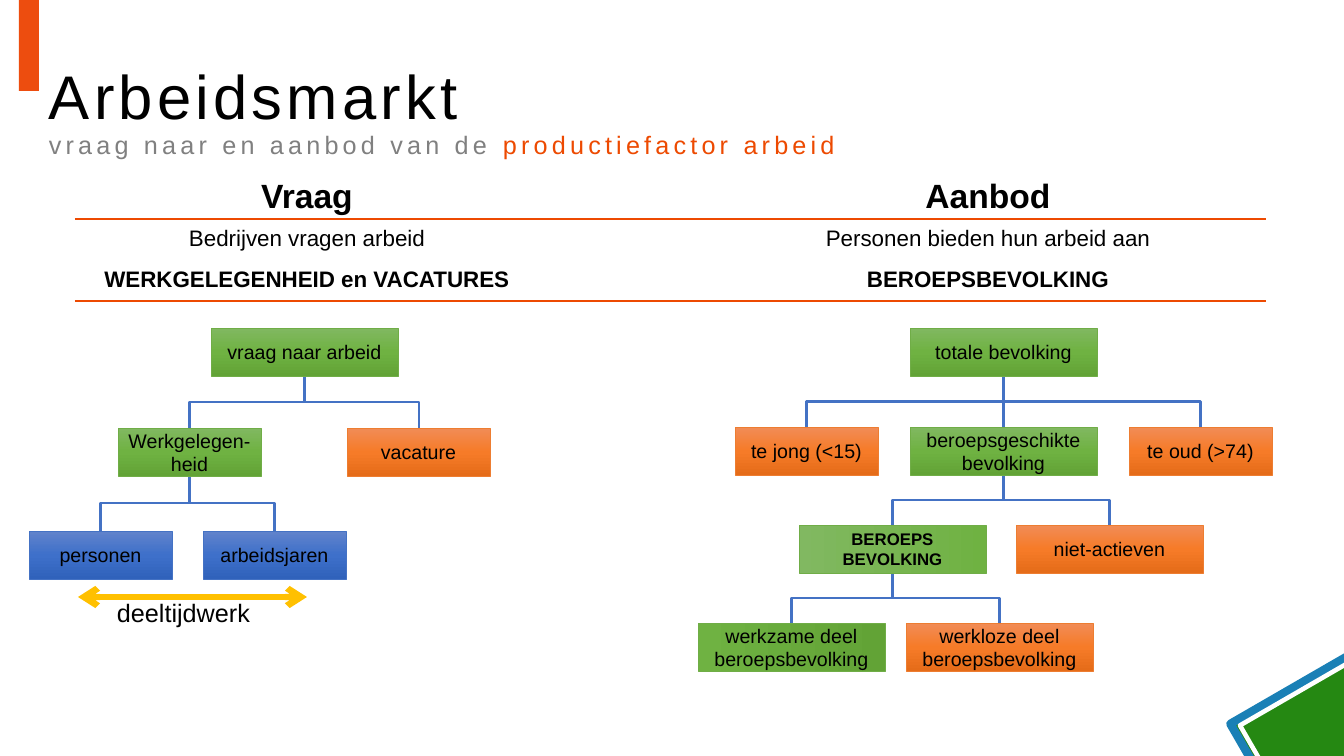
from pptx import Presentation
from pptx.dml.color import RGBColor
from pptx.enum.shapes import MSO_AUTO_SHAPE_TYPE, MSO_CONNECTOR
from pptx.enum.text import MSO_ANCHOR, MSO_AUTO_SIZE, PP_ALIGN
from pptx.oxml import parse_xml
from pptx.oxml.ns import nsdecls, qn
from pptx.util import Emu, Pt

RECT = MSO_AUTO_SHAPE_TYPE.RECTANGLE
STRAIGHT, ELBOW = MSO_CONNECTOR.STRAIGHT, MSO_CONNECTOR.ELBOW
LEFT, CENTER = PP_ALIGN.LEFT, PP_ALIGN.CENTER
TOP, MIDDLE = MSO_ANCHOR.TOP, MSO_ANCHOR.MIDDLE
FIT = MSO_AUTO_SIZE.SHAPE_TO_FIT_TEXT
SCALE = 914400 / 100.8

COLORS = {
    "black": "000000", "white": "FFFFFF", "gray": "808080",
    "accent": "ED4A01", "bar": "ED4D0F", "corner": "258812",
    "corner_edge": "1A80B6", "link": "4472C4", "arrow": "FFC000",
    "green": "70AD47", "orange": "ED7D31", "blue": "4472C4",
}
GRADIENTS = {
    "green": (["81B861", "6FB242", "62A336"], 90),
    "green_dark": (["6FB242", "62A336"], 0),
    "green_light": (["81B861", "6FB242"], 0),
    "orange": (["F18C57", "F67B28", "E56C19"], 90),
    "blue": (["6183CB", "3E70CA", "3062BB"], 90),
}


def px(n):
    return Emu(round(n * SCALE))


def write(tf, lines, size, align=CENTER, anchor=TOP, wrap=True, gap=0):
    for name, value in {"word_wrap": wrap, "vertical_anchor": anchor}.items():
        setattr(tf, name, value)
    for i, (text, bold) in enumerate(lines):
        p = tf.paragraphs[0] if i == 0 else tf.add_paragraph()
        p.text = text
        p.alignment = align
        if i:
            p.space_before = Pt(gap)
        for r in p.runs:
            for name, value in {"name": "Arial", "size": Pt(size), "bold": bold}.items():
                setattr(r.font, name, value)
            r.font.color.rgb = RGBColor.from_string(COLORS["black"])


prs = Presentation()
prs.slide_width, prs.slide_height = px(1344), px(756)
shapes = prs.slides.add_slide(prs.slide_layouts[6]).shapes

for x, y, w, h, rot, fill, line, weight in [
    (1258, 676, 151, 151, 60, "corner", "corner_edge", 6),
    (1265, 682, 137, 137, 60, None, "white", 3.25),
    (19, -25, 20, 116, 0, "bar", None, 0),
]:
    s = shapes.add_shape(RECT, px(x), px(y), px(w), px(h))
    s.shadow.inherit = False
    s.rotation = rot
    if fill:
        s.fill.solid()
        s.fill.fore_color.rgb = RGBColor.from_string(COLORS[fill])
    else:
        s.fill.background()
    if line:
        s.line.color.rgb = RGBColor.from_string(COLORS[line])
        s.line.width = Pt(weight)
    else:
        s.line.fill.background()

tf = shapes.add_textbox(px(39), px(40), px(1268), px(146)).text_frame
tf.word_wrap = True
tf.vertical_anchor = MIDDLE
p = tf.paragraphs[0]
p.line_spacing = 0.9
for text, size, color in [
    ("Arbeidsmarkt ", 44, "black"),
    ("vraag naar en aanbod van de ", 18, "gray"),
    ("productiefactor arbeid", 18, "accent"),
]:
    r = p.add_run()
    r.text = text
    r.font.name = "Arial"
    r.font.size = Pt(size)
    r.font.color.rgb = RGBColor.from_string(COLORS[color])
    r.font._element.set("spc", "300")
    if size == 44:
        p.add_line_break()

for x, heading, intro, term in [
    (56, "Vraag", "Bedrijven vragen arbeid", "WERKGELEGENHEID en VACATURES"),
    (737, "Aanbod", "Personen bieden hun arbeid aan", "BEROEPSBEVOLKING"),
]:
    for y, h, lines, size in [
        (170, 50, [(heading, True)], 24),
        (219, 80, [(intro, False), (term, True)], 16),
    ]:
        tf = shapes.add_textbox(px(x), px(y), px(502), px(h)).text_frame
        tf.auto_size = FIT
        write(tf, lines, size, gap=10)

BOX_H = 48
NODES = {
    "vraag naar arbeid": (211, 328, 187, "green", None),
    "Werkgelegen-heid": (118, 428, 143, "green", "vraag naar arbeid"),
    "vacature": (347, 428, 143, "orange", "vraag naar arbeid"),
    "personen": (29, 531, 143, "blue", "Werkgelegen-heid"),
    "arbeidsjaren": (203, 531, 143, "blue", "Werkgelegen-heid"),
    "totale bevolking": (910, 328, 187, "green", None),
    "te jong (<15)": (735, 427, 143, "orange", "totale bevolking"),
    "beroepsgeschikte\vbevolking": (910, 427, 187, "green", "totale bevolking"),
    "te oud (>74)": (1129, 427, 143, "orange", "totale bevolking"),
    "BEROEPS\vBEVOLKING": (799, 525, 187, "green_light", "beroepsgeschikte\vbevolking"),
    "niet-actieven": (1016, 525, 187, "orange", "beroepsgeschikte\vbevolking"),
    "werkzame deel\vberoepsbevolking": (698, 623, 187, "green_dark", "BEROEPS\vBEVOLKING"),
    "werkloze deel\vberoepsbevolking": (906, 623, 187, "orange", "BEROEPS\vBEVOLKING"),
}

links = [
    (STRAIGHT, 75, 219, 1266, 219, 0, "accent", 1),
    (STRAIGHT, 75, 301, 1266, 301, 0, "accent", 1),
    (STRAIGHT, 78, 597, 307, 597, 0, "arrow", 4.5),
]
for x, y, w, fill, parent in NODES.values():
    if parent:
        px_left, parent_y, parent_w = NODES[parent][:3]
        x1, y1, x2 = px_left + parent_w / 2, parent_y + BOX_H, x + w / 2
        if x1 == x2:
            links.append((STRAIGHT, x1, y1, x2, y, 0, "link", 1.5))
        else:
            cx, cy = (x1 + x2) / 2, (y1 + y) / 2
            run, drop = abs(x2 - x1) / 2, (y - y1) / 2
            side = 1 if x2 < x1 else -1
            links.append((ELBOW, cx - side * drop, cy - run, cx + side * drop, cy + run,
                          90 if side == 1 else 270, "link", 1.5))

for kind, x1, y1, x2, y2, rot, color, weight in links:
    c = shapes.add_connector(kind, px(x1), px(y1), px(x2), px(y2))
    c.line.color.rgb = RGBColor.from_string(COLORS[color])
    c.line.width = Pt(weight)
    spPr = c.element.spPr
    if rot:
        spPr.find(qn("a:xfrm")).set("rot", str(rot * 60000))
    if color == "arrow":
        for end in ("headEnd", "tailEnd"):
            spPr.find(qn("a:ln")).append(parse_xml(f'<a:{end} {nsdecls("a")} type="arrow"/>'))
    spPr.append(parse_xml(f'<a:effectLst {nsdecls("a")}/>'))

for text, (x, y, w, fill, parent) in NODES.items():
    s = shapes.add_shape(RECT, px(x), px(y), px(w), px(BOX_H))
    s.shadow.inherit = False
    s.line.color.rgb = RGBColor.from_string(COLORS[fill.split("_")[0]])
    s.line.width = Pt(0.5)
    stops, angle = GRADIENTS[fill]
    gs = "".join(
        f'<a:gs pos="{i * 100000 // (len(stops) - 1)}"><a:srgbClr val="{stop}"/></a:gs>'
        for i, stop in enumerate(stops))
    s.element.spPr.find(qn("a:prstGeom")).addnext(parse_xml(
        f'<a:gradFill {nsdecls("a")} rotWithShape="1"><a:gsLst>{gs}</a:gsLst>'
        f'<a:lin ang="{angle * 60000}" scaled="0"/></a:gradFill>'))
    bold = text.isupper()
    write(s.text_frame, [(text, bold)], 12 if bold else 14, anchor=MIDDLE)

tf = shapes.add_textbox(px(107), px(592), px(154), px(40)).text_frame
tf.auto_size = FIT
write(tf, [("deeltijdwerk", False)], 18, align=LEFT, wrap=False)

prs.save("out.pptx")
